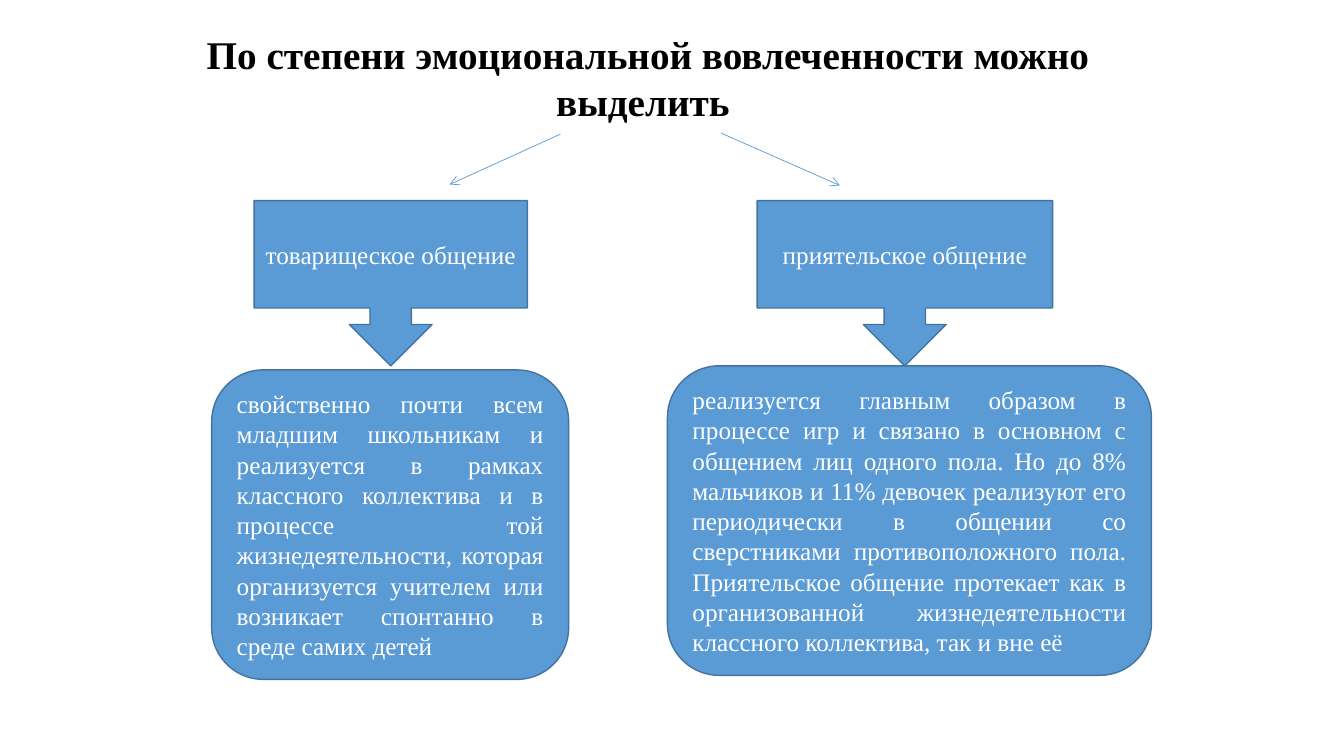
from pptx import Presentation
from pptx.dml.color import RGBColor
from pptx.enum.shapes import MSO_CONNECTOR as Connector, MSO_SHAPE as Shape
from pptx.enum.text import MSO_ANCHOR as Anchor, MSO_AUTO_SIZE as AutoSize, PP_ALIGN as Align
from pptx.oxml.ns import qn
from pptx.util import Inches, Pt
from lxml.etree import SubElement

FONT = "Times New Roman"
BLUE = "5B9BD5"
OUTLINE = "43739E"
WHITE = "FFFFFF"
BLACK = "000000"

TITLE = "По степени эмоциональной вовлеченности можно выделить "
ARROWS = [((5.56, 1.33), (4.46, 1.83)), ((7.15, 1.32), (8.33, 1.84))]
KINDS = [
    {
        "name": "товарищеское общение",
        "name_area": (2.52, 1.99, 2.71, 1.64),
        "details": "свойственно почти всем младшим школьникам и реализуется в рамках "
                   "классного коллектива и в процессе той жизнедеятельности, которая "
                   "организуется учителем или возникает спонтанно в среде самих детей",
        "details_area": (2.1, 3.67, 3.54, 3.07),
    },
    {
        "name": "приятельское общение",
        "name_area": (7.51, 1.99, 2.93, 1.64),
        "details": "реализуется главным образом в процессе игр и связано в основном с "
                   "общением лиц одного пола. Но до 8% мальчиков и 11% девочек реализуют "
                   "его периодически в общении со сверстниками противоположного пола. "
                   "Приятельское общение протекает как в организованной "
                   "жизнедеятельности классного коллектива, так и вне её",
        "details_area": (6.62, 3.63, 4.8, 3.07),
    },
]


def color(value):
    return RGBColor.from_string(value)


def set_values(target, values):
    for name, value in values.items():
        setattr(target, name, value)


def write_text(box, text, align, anchor, size, text_color, bold=False):
    frame = box.text_frame
    set_values(frame, {"word_wrap": True, "vertical_anchor": anchor,
                       "auto_size": AutoSize.NONE})
    para = frame.paragraphs[0]
    para.alignment = align
    span = para.add_run()
    span.text = text
    set_values(span.font, {"name": FONT, "size": Pt(size), "bold": bold})
    span.font.color.rgb = color(text_color)


def place_title(page, text, area):
    title = page.shapes.title
    sides = ("left", "top", "width", "height")
    set_values(title, dict(zip(sides, map(Inches, area))))
    write_text(title, text, Align.CENTER, Anchor.TOP, 28, BLACK, bold=True)


def add_block(page, kind, area, text, align):
    block = page.shapes.add_shape(kind, *map(Inches, area))
    block.shadow.inherit = False
    block.fill.solid()
    block.fill.fore_color.rgb = color(BLUE)
    block.line.color.rgb = color(OUTLINE)
    block.line.width = Pt(1)
    write_text(block, text, align, Anchor.MIDDLE, 18, WHITE)


def add_arrow(page, start, end):
    arrow = page.shapes.add_connector(Connector.STRAIGHT, *map(Inches, start + end))
    arrow.line.color.rgb = color(BLUE)
    arrow.line.width = Pt(0.5)
    SubElement(arrow.line._get_or_add_ln(), qn("a:tailEnd"), type="arrow")
    SubElement(arrow._element.spPr, qn("a:effectLst"))


def main():
    deck = Presentation()
    set_values(deck, {"slide_width": Inches(13.33), "slide_height": Inches(7.5)})
    page = deck.slides.add_slide(deck.slide_layouts.get_by_name("Title Only"))
    place_title(page, TITLE, (1.78, 0.25, 9.29, 1.04))
    for start, end in ARROWS:
        add_arrow(page, start, end)
    for kind in KINDS:
        add_block(page, Shape.ROUNDED_RECTANGLE, kind["details_area"],
                  kind["details"], Align.JUSTIFY)
        add_block(page, Shape.DOWN_ARROW_CALLOUT, kind["name_area"],
                  kind["name"], Align.CENTER)
    deck.save("out.pptx")


if __name__ == "__main__":
    main()
